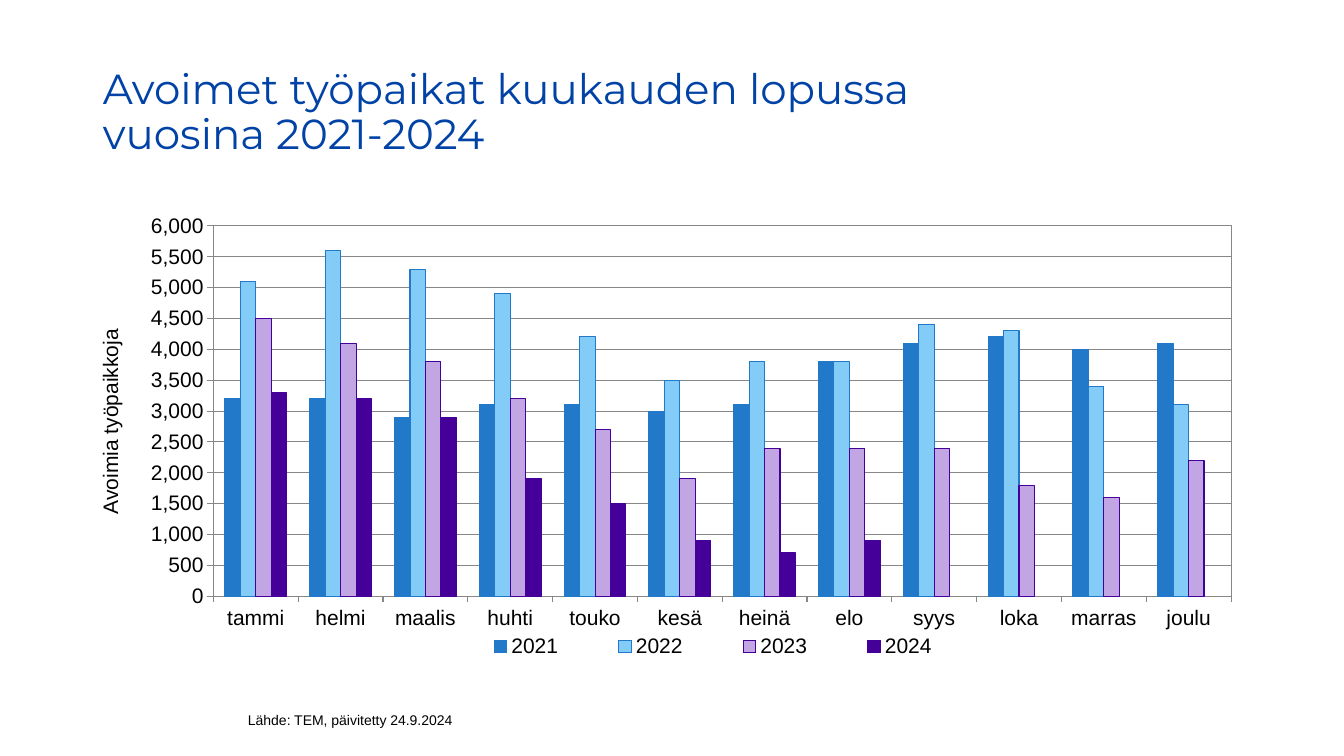
from pptx import Presentation
from pptx.chart.data import CategoryChartData
from pptx.dml.color import RGBColor
from pptx.enum.chart import XL_CHART_TYPE, XL_LEGEND_POSITION, XL_TICK_MARK
from pptx.enum.text import MSO_ANCHOR, PP_ALIGN
from pptx.oxml import parse_xml
from pptx.oxml.ns import nsdecls
from pptx.util import Cm, Pt

COLUMNS = XL_CHART_TYPE.COLUMN_CLUSTERED
BOTTOM = XL_LEGEND_POSITION.BOTTOM
OUTSIDE, NO_TICK = XL_TICK_MARK.OUTSIDE, XL_TICK_MARK.NONE
MIDDLE, LEFT = MSO_ANCHOR.MIDDLE, PP_ALIGN.LEFT
TITLE_ONLY_LAYOUT = 5

BLACK, GRID_GREY = "000000", "878787"
MONTHS = ["tammi", "helmi", "maalis", "huhti", "touko", "kesä",
          "heinä", "elo", "syys", "loka", "marras", "joulu"]
# Year: (fill, outline, open vacancies by month)
YEARS = {
    "2021": ("2278C9", "2278C9", [3200, 3200, 2900, 3100, 3100, 3000,
                                  3100, 3800, 4100, 4200, 4000, 4100]),
    "2022": ("84CCF8", "2278C9", [5100, 5600, 5300, 4900, 4200, 3500,
                                  3800, 3800, 4400, 4300, 3400, 3100]),
    "2023": ("C2A6E3", "450099", [4500, 4100, 3800, 3200, 2700, 1900,
                                  2400, 2400, 2400, 1800, 1600, 2200]),
    "2024": ("450099", "450099", [3300, 3200, 2900, 1900, 1500, 900,
                                  700, 900, None, None, None, None]),
}


def rgb(hex_color):
    return RGBColor.from_string(hex_color)


def apply(target, values):
    for name, value in values.items():
        setattr(target, name, value)


def style_font(font, name, size, color):
    apply(font, {"name": name, "size": Pt(size), "bold": False})
    font.color.rgb = rgb(color)


def style_line(line, color):
    line.color.rgb = rgb(color)
    line.width = Pt(0.75)


def manual_layout(x, y, w, h, target=""):
    """Return a chart layout given as fractions of the chart area."""
    return parse_xml(
        f'<c:layout {nsdecls("c")}><c:manualLayout>{target}'
        '<c:xMode val="edge"/><c:yMode val="edge"/>'
        f'<c:x val="{x}"/><c:y val="{y}"/><c:w val="{w}"/><c:h val="{h}"/>'
        '</c:manualLayout></c:layout>')


def add_title(slide, text):
    title = slide.shapes.title
    apply(title, {"left": Cm(2.34), "top": Cm(1.47),
                  "width": Cm(28.12), "height": Cm(2.77)})
    frame = title.text_frame
    frame.text = text
    frame.vertical_anchor = MIDDLE
    paragraph = frame.paragraphs[0]
    apply(paragraph, {"alignment": LEFT, "line_spacing": 0.9})
    for run in paragraph.runs:
        style_font(run.font, "Montserrat", 30, "0042A6")


def add_source_note(slide, text):
    note = slide.shapes.add_textbox(Cm(6), Cm(17.81), Cm(11.71), Cm(1.02))
    note.text_frame.word_wrap = True
    note.text_frame.text = text
    style_font(note.text_frame.paragraphs[0].runs[0].font, "Arial", 10, BLACK)


def style_axes(chart):
    vacancies, months = chart.value_axis, chart.category_axis
    for axis in (vacancies, months):
        apply(axis, {"major_tick_mark": OUTSIDE, "minor_tick_mark": NO_TICK})
        style_line(axis.format.line, GRID_GREY)
    apply(vacancies, {"minimum_scale": 0, "maximum_scale": 6000,
                      "major_unit": 500, "has_major_gridlines": True})
    style_line(vacancies.major_gridlines.format.line, GRID_GREY)
    apply(vacancies.tick_labels, {"number_format": "#,##0",
                                  "number_format_is_linked": False})
    caption = vacancies.axis_title.text_frame
    caption.text = "Avoimia työpaikkoja"
    style_font(caption.paragraphs[0].runs[0].font, "Arial", 15, BLACK)


def place_chart_parts(chart):
    plot_area = chart.element.xpath(".//c:plotArea")[0]
    for layout in plot_area.xpath("./c:layout"):
        plot_area.remove(layout)
    plot_area.insert(0, manual_layout(0.104, 0.04, 0.878, 0.806,
                                      '<c:layoutTarget val="inner"/>'))
    # Frame around the plot
    plot_area.append(parse_xml(
        f'<c:spPr {nsdecls("c", "a")}><a:noFill/><a:ln w="9525"><a:solidFill>'
        f'<a:srgbClr val="{GRID_GREY}"/></a:solidFill></a:ln></c:spPr>'))
    legend_position = chart.element.xpath(".//c:legend/c:legendPos")[0]
    legend_position.addnext(manual_layout(0.3, 0.92, 0.47, 0.07))


def add_vacancy_chart(slide):
    data = CategoryChartData(number_format="General")
    data.categories = MONTHS
    for year, (_, _, vacancies) in YEARS.items():
        data.add_series(year, vacancies)
    chart = slide.shapes.add_chart(COLUMNS, Cm(2.34), Cm(5.23),
                                   Cm(29.21), Cm(11.58), data).chart
    apply(chart, {"has_title": False, "has_legend": True})
    style_font(chart.font, "Arial", 15, BLACK)
    apply(chart.legend, {"position": BOTTOM, "include_in_layout": False})
    plot = chart.plots[0]
    apply(plot, {"gap_width": 150, "overlap": 0, "vary_by_categories": False})
    for series, (fill, outline, _) in zip(plot.series, YEARS.values()):
        series.format.fill.solid()
        series.format.fill.fore_color.rgb = rgb(fill)
        style_line(series.format.line, outline)
    style_axes(chart)
    place_chart_parts(chart)


def main():
    deck = Presentation()
    apply(deck, {"slide_width": Cm(33.87), "slide_height": Cm(19.05)})
    slide = deck.slides.add_slide(deck.slide_layouts[TITLE_ONLY_LAYOUT])
    add_title(slide, "Avoimet työpaikat kuukauden lopussa \vvuosina 2021-2024")
    add_source_note(slide, "Lähde: TEM, päivitetty 24.9.2024")
    add_vacancy_chart(slide)
    deck.save("out.pptx")


if __name__ == "__main__":
    main()
